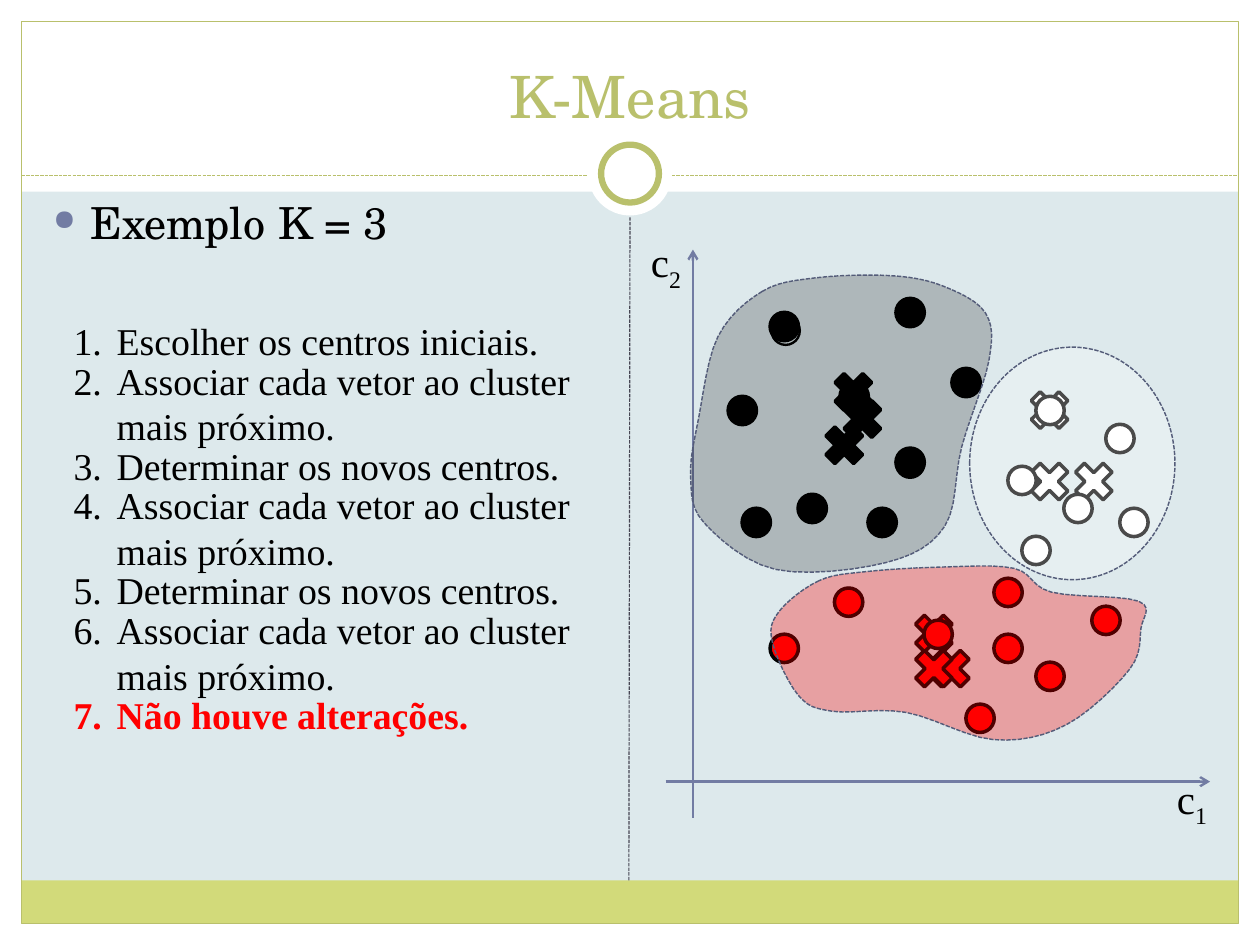
from collections import namedtuple
from lxml.etree import SubElement
from pptx import Presentation
from pptx.dml.color import RGBColor
from pptx.enum.dml import MSO_LINE
from pptx.enum.shapes import MSO_CONNECTOR, MSO_SHAPE
from pptx.enum.text import MSO_ANCHOR, PP_ALIGN
from pptx.oxml.ns import qn
from pptx.util import Inches, Pt

COLORS = {
    "background": "DDE9EC", "white": "FFFFFF", "black": "000000", "red": "FF0000",
    "olive": "B9C06C", "lime": "D2DA7A", "slate": "464653", "axis": "727CA3",
    "outline": "545C79",
}
HEADING_FONT = "TeX Gyre Schola"
BODY_FONT = "Times New Roman"
EDGE = 0.19
DOT_SIZE = 0.25
CROSS_SIZE = 0.47
GRID_LEFT, GRID_TOP, GRID_PITCH = 0.42, 0.63, 0.37 / 3
CURVE_STEPS = 6
SINGLE_STEP, DOUBLE_STEP = 0.35, 0.75

Box = namedtuple("Box", "left top width height")
Cluster = namedtuple("Cluster", "color alpha centers dot_cells hull")

WHITE_REGION = Box(2.55, 1.06, 1.81, 2.05)
CLUSTERS = [
    Cluster("white", 29, [(3.41, 2.01), (3.02, 1.38), (3.02, 2.01)],
            [(21, 17), (28, 15), (24, 14), (20, 12), (27, 9), (22, 7)], None),
    Cluster("black", 21, [(1.37, 1.46), (1.29, 1.22), (1.21, 1.69)],
            [(0, 7), (8, 6), (5, 14), (12, 0), (12, 10.7), (16, 5), (10, 15),
             (1, 15), (3, 1)],
            [(0.72, 0.57), (0.33, 0.97), (0.16, 1.69), (0.09, 2.2), (0.21, 2.61),
             (0.84, 3.02), (1.81, 2.96), (2.33, 2.64), (2.48, 1.94), (2.72, 1.18),
             (2.69, 0.76), (2.31, 0.52), (1.85, 0.43), (1.19, 0.45)]),
    Cluster("red", 31, [(2.15, 3.66), (2, 3.35), (2, 3.66)],
            [(19, 24), (26, 22), (14, 23), (19, 20), (17, 29), (22, 26), (3, 24),
             (7.6, 20.7)],
            [(1.22, 3.12), (0.87, 3.39), (0.81, 3.66), (1.04, 4.13), (1.34, 4.27),
             (1.99, 4.28), (2.76, 4.52), (3.4, 4.39), (3.96, 3.9), (4.06, 3.54),
             (4.04, 3.3), (3.27, 3.22), (2.94, 3.01), (2.28, 3), (1.63, 3.04)]),
]
UNASSIGNED_CELLS = [(12, 10.8), (3.1, 1.3), (7.6, 20.7)]

ASSOCIATE = "Associar cada vetor ao cluster mais próximo."
DETERMINE = "Determinar os novos centros."
STEPS = ["Escolher os centros iniciais.", *[ASSOCIATE, DETERMINE] * 2, ASSOCIATE,
         "Não houve alterações."]


def rgb(name):
    return RGBColor.from_string(COLORS[name])


def style_line(line, color, width, dashed):
    line.color.rgb = rgb(color)
    line.width = Pt(width)
    if dashed:
        line.dash_style = MSO_LINE.SQUARE_DOT


def style(shape, fill=None, line=None, width=0.75, dashed=False, alpha=None):
    shape.shadow.inherit = False
    if fill:
        shape.fill.solid()
        shape.fill.fore_color.rgb = rgb(fill)
    else:
        shape.fill.background()
    if alpha:
        color = shape._element.spPr.find(qn("a:solidFill"))[0]
        SubElement(color, qn("a:alpha"), val=str(alpha * 1000))
    if line:
        style_line(shape.line, line, width, dashed)
    else:
        shape.line.fill.background()


def add_preset(slide, preset, box, *args, **kwargs):
    style(slide.shapes.add_shape(preset, *map(Inches, box)), *args, **kwargs)


def add_line(slide, start, end, color, width=0.75, dashed=False, arrow=False):
    line = slide.shapes.add_connector(MSO_CONNECTOR.STRAIGHT, *map(Inches, start + end))
    style_line(line.line, color, width, dashed)
    if arrow:
        SubElement(line.line._get_or_add_ln(), qn("a:tailEnd"), type="arrow")
    SubElement(line._element.spPr, qn("a:effectLst"))


def add_run(paragraph, text, size, font, color="black", bold=False):
    run = paragraph.add_run()
    run.text = text
    run.font.size = Pt(size)
    run.font.name = font
    run.font.bold = bold
    run.font.color.rgb = rgb(color)
    return run


def add_paragraph_box(slide, box):
    frame = slide.shapes.add_textbox(*map(Inches, box)).text_frame
    frame.word_wrap = True
    return frame.paragraphs[0]


def hang(paragraph, indent):
    properties = paragraph._p.get_or_add_pPr()
    properties.set("marL", str(Inches(indent)))
    properties.set("indent", str(-Inches(indent)))
    return properties


def smooth_curve(anchors):
    def blend(before, start, end, after, t):
        return (start + (end - before) * t / 2
                + (2 * before - 5 * start + 4 * end - after) * t ** 2 / 2
                + (3 * start - before - 3 * end + after) * t ** 3 / 2)

    curve = []
    for index in range(len(anchors)):
        nearby = [anchors[(index + shift) % len(anchors)] for shift in (-1, 0, 1, 2)]
        xs, ys = zip(*nearby)
        for step in range(CURVE_STEPS):
            t = step / CURVE_STEPS
            curve.append((blend(*xs, t), blend(*ys, t)))
    return curve


def add_frame(slide, box):
    left, top, width, height = box
    center = left + width / 2
    inner = Box(left + EDGE, top + EDGE, width - 2 * EDGE, height - 2 * EDGE)
    header = Box(left, top, width, 1.69)
    footer = Box(inner.left, top + 7.76, inner.width, 0.38)
    rule_y, ring_y = top + 1.55, top + 1.53

    bottom_edge = Box(left, top + height - EDGE, width, EDGE)
    left_edge = Box(left, top, EDGE, height)
    right_edge = Box(left + width - EDGE, top, EDGE, height)
    for band in (bottom_edge, header, left_edge, right_edge):
        add_preset(slide, MSO_SHAPE.RECTANGLE, band, "white")
    add_preset(slide, MSO_SHAPE.RECTANGLE, footer, "lime")
    add_preset(slide, MSO_SHAPE.RECTANGLE, inner, None, "olive")
    add_line(slide, (inner.left, rule_y), (inner.left + inner.width, rule_y),
             "olive", dashed=True)
    for size, line in [(0.74, None), (0.51, "olive")]:
        ring = Box(center - size / 2, ring_y - size / 2, size, size)
        add_preset(slide, MSO_SHAPE.OVAL, ring, "white", line, 4)
    add_line(slide, (center - 0.01, footer.top), (center, top + 1.91),
             "slate", dashed=True)


def add_title(slide, box):
    title = slide.shapes.title
    title.left, title.top, title.width, title.height = map(Inches, box)
    slide.shapes._spTree.append(title._element)
    title.text_frame.vertical_anchor = MSO_ANCHOR.BOTTOM
    heading = title.text_frame.paragraphs[0]
    heading.alignment = PP_ALIGN.CENTER
    add_run(heading, "K-Means", 37, HEADING_FONT, "olive")


def add_steps(slide, box):
    left, top, width, height = box
    example = add_paragraph_box(slide, Box(left, top, width, 0.7))
    example.space_before = Pt(5.6)
    bullet = hang(example, 0.33)
    bullet_color = SubElement(bullet, qn("a:buClr"))
    SubElement(bullet_color, qn("a:srgbClr"), val=COLORS["axis"])
    SubElement(bullet, qn("a:buSzPct"), val="65000")
    SubElement(bullet, qn("a:buChar"), char="●")
    add_run(example, "Exemplo K = 3", 28, HEADING_FONT)

    step_top = top + 1.08
    for number, text in enumerate(STEPS, 1):
        advance = DOUBLE_STEP if text == ASSOCIATE else SINGLE_STEP
        step = add_paragraph_box(
            slide, Box(left + 0.18, step_top, width - 0.3, advance + 0.15))
        SubElement(hang(step, 0.38), qn("a:buAutoNum"),
                   type="arabicPeriod", startAt=str(number))
        last = number == len(STEPS)
        add_run(step, text, 24, BODY_FONT, "red" if last else "black", last)
        step_top += advance


def add_cluster_plot(slide, box):
    left, top, width, height = box

    def place(x, y):
        return left + x, top + y

    def add_dot(cell, color, line_width):
        column, row = cell
        spot = place(GRID_LEFT + column * GRID_PITCH, GRID_TOP + row * GRID_PITCH)
        add_preset(slide, MSO_SHAPE.OVAL, Box(*spot, DOT_SIZE, DOT_SIZE),
                   color, "black", line_width)

    def add_region(cluster):
        look = dict(fill=cluster.color, line="outline", width=0.9, dashed=True,
                    alpha=cluster.alpha)
        if cluster.hull is None:
            spot = place(WHITE_REGION.left, WHITE_REGION.top)
            region = Box(*spot, WHITE_REGION.width, WHITE_REGION.height)
            add_preset(slide, MSO_SHAPE.OVAL, region, **look)
            return
        curve = [tuple(map(Inches, place(*point))) for point in smooth_curve(cluster.hull)]
        builder = slide.shapes.build_freeform(*curve[0])
        builder.add_line_segments(curve[1:], close=True)
        style(builder.convert_to_shape(), **look)

    add_line(slide, place(0.11, height), place(0.11, 0.2), "axis", 1.5, arrow=True)
    add_line(slide, place(-0.13, 4.89), place(width, 4.89), "axis", 1.5, arrow=True)
    for index, spot in [("2", (-0.36, 0.04)), ("1", (4.28, 4.77))]:
        label = add_paragraph_box(slide, Box(*place(*spot), 0.63, 0.54))
        add_run(label, "c", 26, BODY_FONT)
        subscript = add_run(label, index, 26, BODY_FONT)
        subscript._r.get_or_add_rPr().set("baseline", "-25000")
    for cell in UNASSIGNED_CELLS:
        add_dot(cell, "background", 1.5)
    for cluster in CLUSTERS:
        for center in cluster.centers:
            add_preset(slide, MSO_SHAPE.MATH_MULTIPLY,
                       Box(*place(*center), CROSS_SIZE, CROSS_SIZE),
                       cluster.color, "black", 2.25)
        for cell in cluster.dot_cells:
            add_dot(cell, cluster.color, 2.25)
    for cluster in CLUSTERS:
        add_region(cluster)


def main():
    deck = Presentation()
    deck.slide_width, deck.slide_height = Inches(11.11), Inches(8.33)
    slide = deck.slides.add_slide(deck.slide_layouts[5])
    slide.background.fill.solid()
    slide.background.fill.fore_color.rgb = rgb("background")
    add_frame(slide, Box(0, 0, 11.11, 8.33))
    add_title(slide, Box(0.37, 0.28, 10.37, 0.92))
    add_steps(slide, Box(0.37, 1.67, 4.91, 5.69))
    add_cluster_plot(slide, Box(6, 2, 4.67, 5.21))
    deck.save("out.pptx")


if __name__ == "__main__":
    main()
